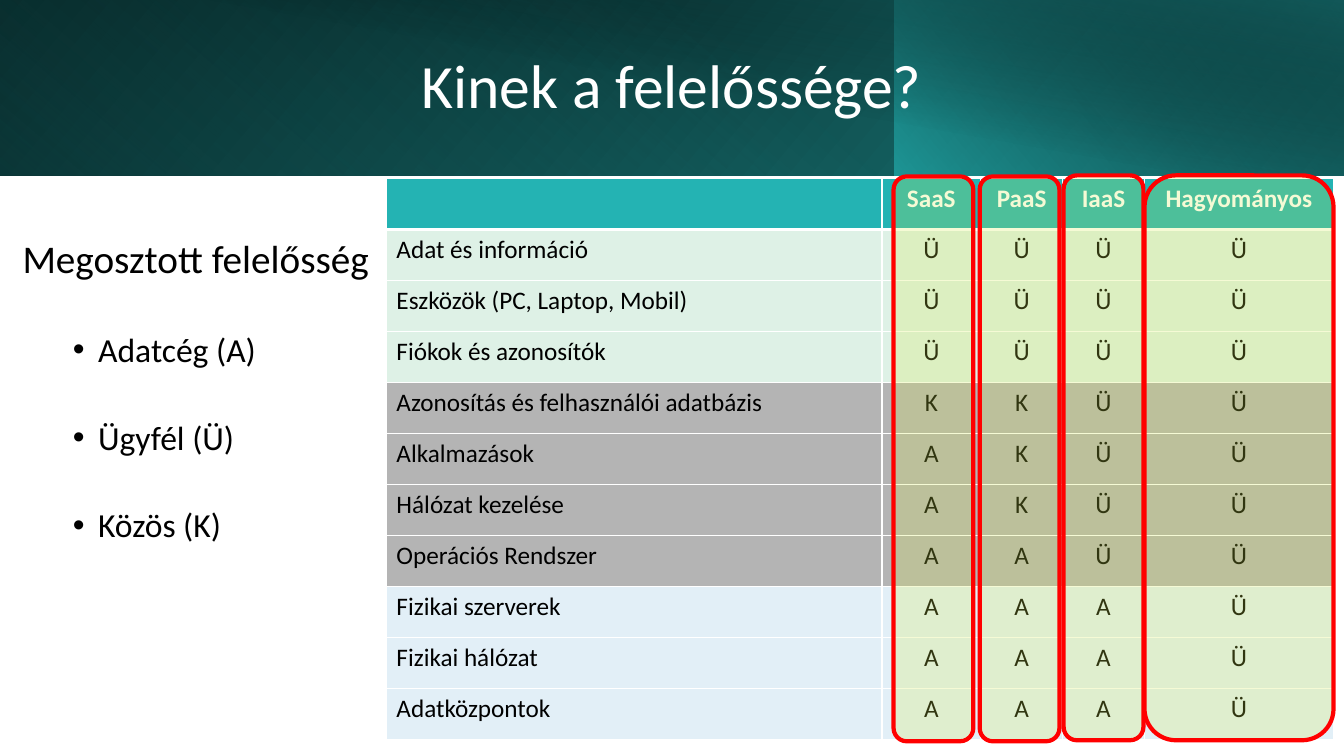
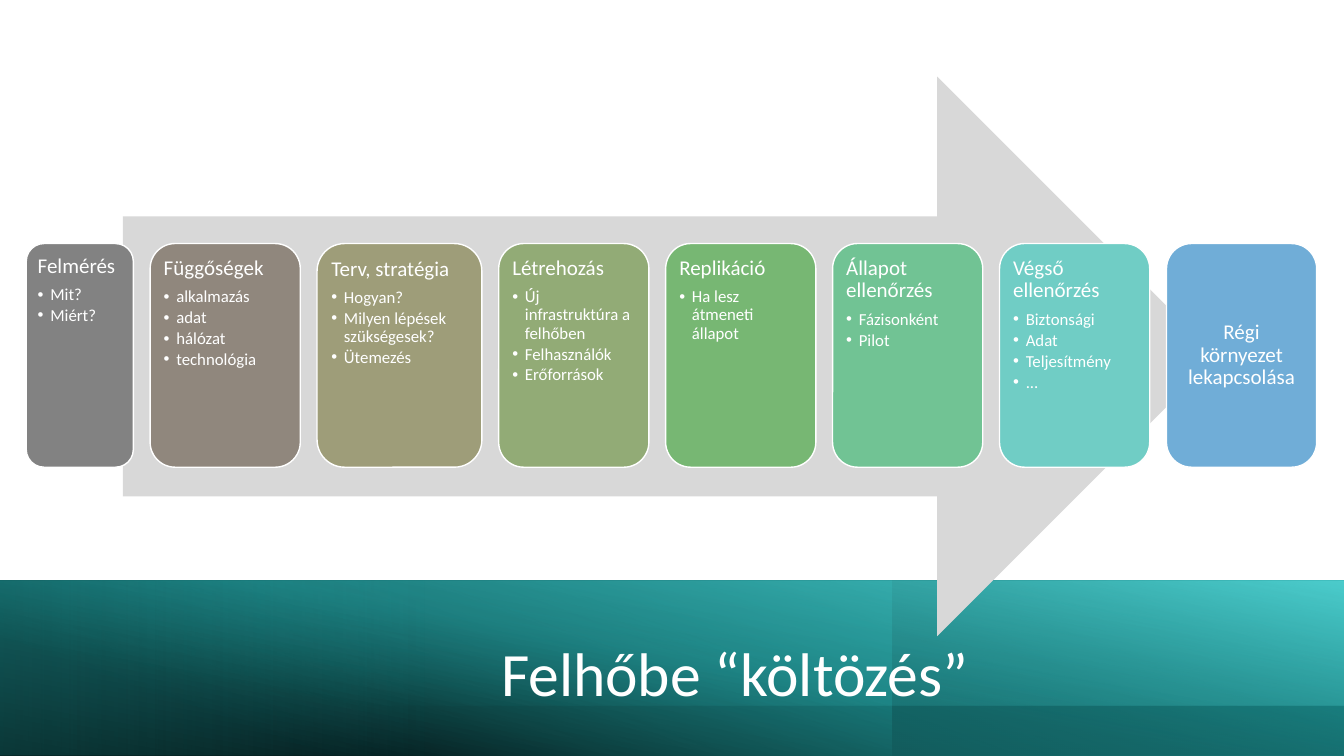
from lxml.etree import SubElement
from pptx import Presentation
from pptx.dml.color import RGBColor
from pptx.enum.shapes import MSO_SHAPE
from pptx.enum.text import MSO_ANCHOR, PP_ALIGN
from pptx.oxml.ns import qn
from pptx.util import Emu, Pt

FONT = "Calibri"
EMU_PER_PX = 9525
PAGE_WIDTH, PAGE_HEIGHT = 1280, 720
BAND_HEIGHT = 167
COLORS = {
    "white": "FFFFFF", "black": "000000", "teal": "24B3B3", "mid_teal": "1B8686",
    "deep_teal": "12595A", "light_teal": "6CE1E1", "mint": "DEF1E6", "gray": "B4B4B4",
    "pale_blue": "E2EFF7", "lime": "D7EB4A", "red": "FF0000", "arrow": "D8D8D8",
}

TABLE_HEADER = ["", "SaaS", "PaaS", "IaaS", "Hagyományos"]
TABLE_ROWS = [
    ("mint", "Adat és információ", "ÜÜÜÜ"),
    ("mint", "Eszközök (PC, Laptop, Mobil)", "ÜÜÜÜ"),
    ("mint", "Fiókok és azonosítók", "ÜÜÜÜ"),
    ("gray", "Azonosítás és felhasználói adatbázis", "KKÜÜ"),
    ("gray", "Alkalmazások", "AKÜÜ"),
    ("gray", "Hálózat kezelése", "AKÜÜ"),
    ("gray", "Operációs Rendszer", "AAÜÜ"),
    ("pale_blue", "Fizikai szerverek", "AAAÜ"),
    ("pale_blue", "Fizikai hálózat", "AAAÜ"),
    ("pale_blue", "Adatközpontok", "AAAÜ"),
]
COLUMN_WIDTHS = [472, 94, 78, 78, 180]

STEPS = [
    ("828282", 102, "Felmérés", ["Mit?", "Miért?"]),
    ("90877D", 143, "Függőségek", ["alkalmazás", "adat", "hálózat", "technológia"]),
    ("9E9D79", 157, "Terv, stratégia",
     ["Hogyan?", "Milyen lépések szükségesek?", "Ütemezés"]),
    ("92AB76", 143, "Létrehozás",
     ["Új infrastruktúra a felhőben", "Felhasználók", "Erőforrások"]),
    ("77B773", 143, "Replikáció", ["Ha lesz átmeneti állapot"]),
    ("71C394", 143, "Állapot ellenőrzés", ["Fázisonként", "Pilot"]),
    ("70CDC5", 143, "Végső ellenőrzés", ["Biztonsági", "Adat", "Teljesítmény", "..."]),
    ("70ADD7", 143, "Régi környezet lekapcsolása", []),
]


def px(value):
    """Turn pixels into EMU."""
    return Emu(value * EMU_PER_PX)


def rgb(name):
    """Look up a named colour or read a hex string."""
    return RGBColor.from_string(COLORS.get(name, name))


def format_para(para, size, color, bold=False, align=None, spacing=None, before=None, after=None):
    """Set the spacing of a paragraph and the font of its runs."""
    if align is not None:
        para.alignment = align
    if spacing is not None:
        para.line_spacing = spacing
    if before is not None:
        para.space_before = Pt(before)
    if after is not None:
        para.space_after = Pt(after)
    for span in para.runs:
        span.font.name = FONT
        span.font.size = Pt(size)
        span.font.bold = bold
        span.font.color.rgb = rgb(color)


def add_bullet(para, left, hanging):
    """Give a paragraph a round bullet and a hanging indent."""
    para.level = 1
    properties = para._p.get_or_add_pPr()
    properties.set("marL", str(px(left)))
    properties.set("indent", str(-px(hanging)))
    SubElement(properties, qn("a:buFont")).set("typeface", "Arial")
    SubElement(properties, qn("a:buChar")).set("char", "•")


def set_opacity(shape, percentages):
    """Apply one opacity to each fill colour of a shape, in order."""
    for color, percent in zip(list(shape._element.iter(qn("a:srgbClr"))), percentages):
        if percent < 100:
            SubElement(color, qn("a:alpha")).set("val", str(percent * 1000))


def add_block(page, kind, box, fill=None, line=None, line_width=1):
    """Add a preset shape with an optional solid fill and line."""
    shape = page.shapes.add_shape(kind, *map(px, box))
    shape.shadow.inherit = False
    if fill:
        shape.fill.solid()
        shape.fill.fore_color.rgb = rgb(fill)
    if line:
        shape.line.color.rgb = rgb(line)
        shape.line.width = Pt(line_width)
    else:
        shape.line.fill.background()
    return shape


def add_gradient(page, box, angle, stops):
    """Add a rectangle with a clockwise gradient of (position, colour, opacity) stops."""
    shape = add_block(page, MSO_SHAPE.RECTANGLE, box)
    shape.fill.gradient()
    shape.fill.gradient_angle = 360 - angle
    for stop, (position, color, _) in zip(shape.fill.gradient_stops, stops):
        stop.position = position / 100
        stop.color.rgb = rgb(color)
    set_opacity(shape, [opacity for _, _, opacity in stops])


def add_titled_page(deck, title, left, top, bands):
    """Add a title-only page whose title lies over gradient bands."""
    page = deck.slides.add_slide(deck.slide_layouts[5])
    for band in bands:
        add_gradient(page, *band)
    box = page.shapes.title
    box.left, box.top, box.width, box.height = map(px, (left, top, 1104, 139))
    box.text_frame.text = title
    box.text_frame.vertical_anchor = MSO_ANCHOR.MIDDLE
    format_para(box.text_frame.paragraphs[0], 44, "white", align=PP_ALIGN.CENTER, spacing=0.9)
    page.shapes._spTree.append(box._element)
    return page


def add_legend(page, heading, items):
    """Add the heading and the bulleted list of responsible parties."""
    frame = page.shapes.add_textbox(*map(px, (12, 174, 360, 440))).text_frame
    frame.word_wrap = True
    frame.text = heading
    format_para(frame.paragraphs[0], 28, "black", spacing=2.0)
    for item in items:
        para = frame.add_paragraph()
        para.text = item
        add_bullet(para, 72, 24)
        format_para(para, 24, "black", spacing=2.0, before=5)


def set_borders(cell, bottom_width):
    """Draw white borders around a cell, ahead of its fill."""
    properties = cell._tc.get_or_add_tcPr()
    widths = {"a:lnL": 1, "a:lnR": 1, "a:lnT": 1, "a:lnB": bottom_width}
    for index, (tag, width) in enumerate(widths.items()):
        border = SubElement(properties, qn(tag), w=str(Pt(width)))
        fill = SubElement(border, qn("a:solidFill"))
        SubElement(fill, qn("a:srgbClr")).set("val", COLORS["white"])
        properties.insert(index, border)


def add_responsibility_table(page):
    """Add the table of who is responsible in each service model."""
    rows = [("teal", TABLE_HEADER)]
    rows += [(fill, [label, *owners]) for fill, label, owners in TABLE_ROWS]
    frame = page.shapes.add_table(len(rows), len(COLUMN_WIDTHS),
                                  *map(px, (368, 170, sum(COLUMN_WIDTHS), 535)))
    table = frame.table
    table.horz_banding = False
    for column, width in zip(table.columns, COLUMN_WIDTHS):
        column.width = px(width)
    for row_index, (fill, texts) in enumerate(rows):
        header = row_index == 0
        for column_index, text in enumerate(texts):
            cell = table.cell(row_index, column_index)
            cell.text = text
            cell.fill.solid()
            cell.fill.fore_color.rgb = rgb(fill)
            set_borders(cell, 3 if header else 1)
            format_para(cell.text_frame.paragraphs[0], 18, "white" if header else "black",
                        bold=header, align=PP_ALIGN.CENTER if column_index else None)


def add_step(page, left, width, color, heading, items):
    """Add one rounded step card with a heading and bullets."""
    card = add_block(page, MSO_SHAPE.ROUNDED_RECTANGLE, (left, 232, width, 213), color, "white")
    frame = card.text_frame
    frame.word_wrap = True
    frame.margin_left = frame.margin_right = frame.margin_top = frame.margin_bottom = px(6)
    frame.vertical_anchor = MSO_ANCHOR.TOP if items else MSO_ANCHOR.MIDDLE
    frame.text = heading
    format_para(frame.paragraphs[0], 15, "white", spacing=0.9, after=6 if items else 0,
                align=PP_ALIGN.LEFT if items else PP_ALIGN.CENTER)
    for item in items:
        para = frame.add_paragraph()
        para.text = item
        add_bullet(para, 12, 12)
        format_para(para, 12, "white", align=PP_ALIGN.LEFT, spacing=0.9, after=2)


def build_responsibility_page(deck):
    """Build the page on shared responsibility."""
    bands = [
        ((0, 0, PAGE_WIDTH, BAND_HEIGHT), 40, [(0, "black", 100), (100, "mid_teal", 100)]),
        ((0, 0, 852, BAND_HEIGHT), 130, [(20, "teal", 0), (100, "deep_teal", 55)]),
        ((852, 0, 428, BAND_HEIGHT), 320, [(0, "teal", 66), (100, "black", 30)]),
        ((48, 0, 1232, BAND_HEIGHT), 280, [(50, "black", 0), (99, "deep_teal", 52)]),
    ]
    page = add_titled_page(deck, "Kinek a felelőssége?", 88, 15, bands)
    add_legend(page, "Megosztott felelősség", ["Adatcég (A)", "Ügyfél (Ü)", "Közös (K)"])
    add_responsibility_table(page)
    for left, top, width in [(1090, 167, 180), (1013, 167, 76), (933, 168, 76), (851, 168, 76)]:
        ring = add_block(page, MSO_SHAPE.ROUNDED_RECTANGLE, (left, top, width, 538),
                         "lime", "red", 3)
        set_opacity(ring, [23])


def build_migration_page(deck):
    """Build the page on the steps of moving to the cloud."""
    top = PAGE_HEIGHT - BAND_HEIGHT
    full = (0, top, PAGE_WIDTH, BAND_HEIGHT)
    bands = [
        (full, 280, [(0, "black", 100), (54, "deep_teal", 100)]),
        (full, 290, [(18, "mid_teal", 0), (100, "teal", 100)]),
        ((850, top, 430, BAND_HEIGHT), 280, [(23, "deep_teal", 61), (100, "deep_teal", 0)]),
        ((0, top, PAGE_WIDTH, 119), 280, [(18, "teal", 0), (100, "light_teal", 56)]),
        ((0, top, 812, BAND_HEIGHT), 180, [(50, "teal", 0), (100, "mid_teal", 41)]),
    ]
    page = add_titled_page(deck, "Felhőbe “költözés”", 148, 575, bands)
    add_block(page, MSO_SHAPE.RIGHT_ARROW, (117, 73, 1042, 533), "arrow")
    left, gap = 25, 16
    for color, width, heading, items in STEPS:
        add_step(page, left, width, color, heading, items)
        left += width + gap


def main():
    """Build and save the deck."""
    deck = Presentation()
    deck.slide_width, deck.slide_height = px(PAGE_WIDTH), px(PAGE_HEIGHT)
    build_responsibility_page(deck)
    build_migration_page(deck)
    deck.save("out.pptx")


if __name__ == "__main__":
    main()
